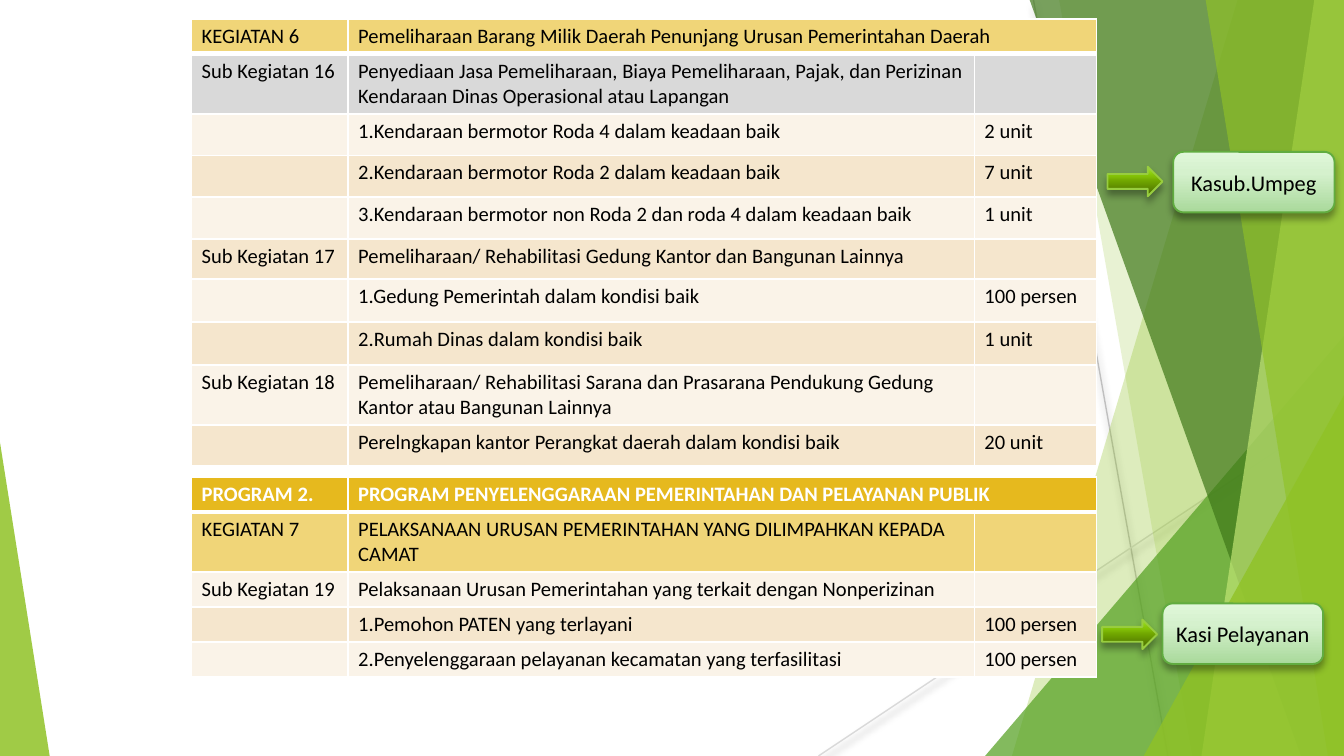
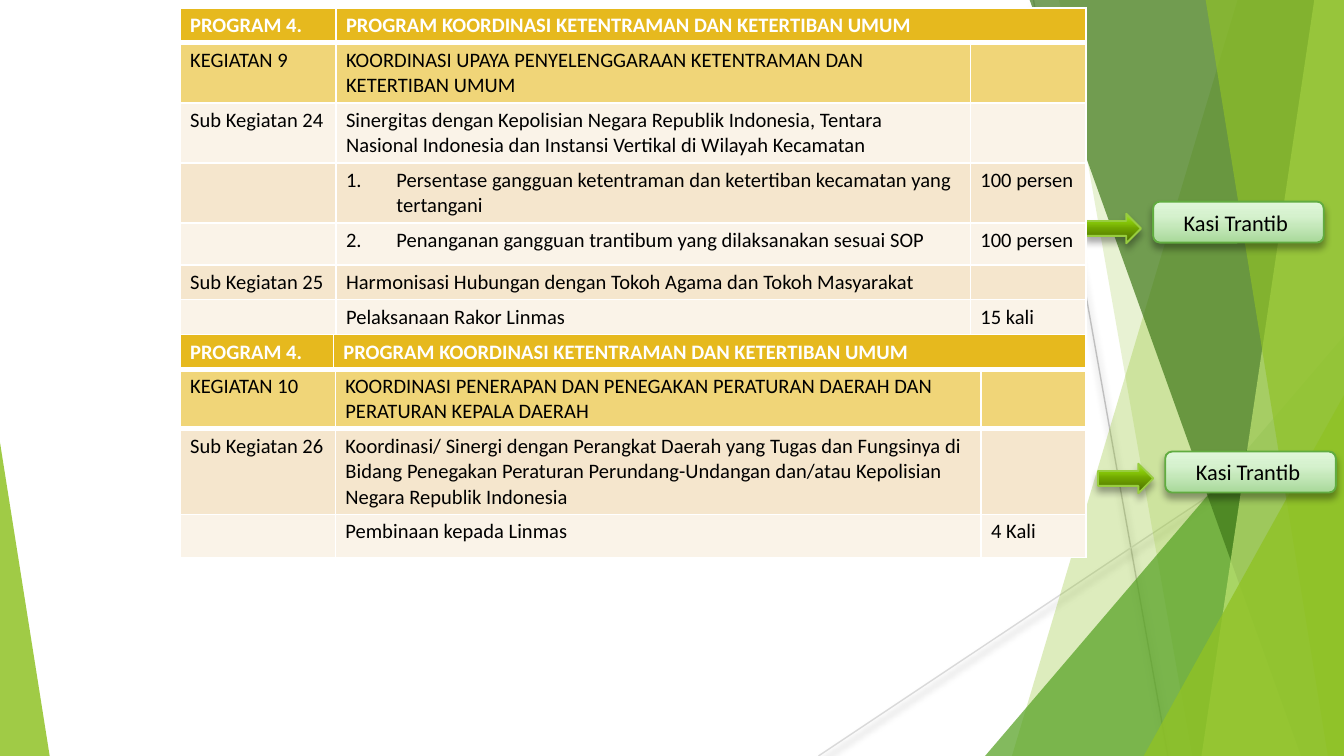
from lxml import etree
from pptx import Presentation
from pptx import util as u
from pptx.dml.color import RGBColor
from pptx.enum import shapes, text
from pptx.oxml.ns import qn

SCALE = 4572
WIDTH, HEIGHT = 2000, 1125
FONT = "Calibri"
COLORS = {
    "black": "000000", "white": "FFFFFF",
    "program": "E6B91E", "kegiatan": "F0D578", "grey": "D9D9D9",
    "light": "FAF3E8", "dark": "F5E6CD",
    "green": "90C226", "leaf": "54A021", "forest": "3F7819", "lime": "C0E474",
    "line": "BFBFBF", "pale_line": "D9D9D9",
    "callout_line": "61AC40", "arrow_line": "98CD3F",
}
CALLOUT_STOPS = [(0, "A9D99B"), (65, "D5F1CD"), (100, "E0F7DA")]
ARROW_STOPS = [(0, "456600"), (50, "6FA400"), (70, "84C307"), (100, "A0E727")]


def px(*lengths):
    return [u.Emu(length * SCALE) for length in lengths]


def rgb(name):
    return RGBColor.from_string(COLORS[name])


def child(parent, tag, **attributes):
    values = {key: str(value) for key, value in attributes.items()}
    return etree.SubElement(parent, qn(tag), values)


class Deck:
    def __init__(self):
        self.presentation = Presentation()
        self.presentation.slide_width, self.presentation.slide_height = px(WIDTH, HEIGHT)
        self.slide = None

    def add_slide(self):
        self.slide = self.presentation.slides.add_slide(self.presentation.slide_layouts[6])
        fill = self.slide.background.fill
        fill.solid()
        fill.fore_color.rgb = rgb("white")
        self.backdrop()

    def backdrop(self):
        self.line((1538, 0), (1738, HEIGHT), "line")
        self.line((WIDTH, 604), (1218, HEIGHT), "pale_line")
        self.ribbon(1842, 1506, "green", 30)
        self.ribbon(1576, 1774, "green", 20)
        self.triangle((1466, 500, 534, 625), 1, "leaf", 72)
        self.ribbon(1532, 1936, "forest", 70)
        self.ribbon(1956, 1788, "lime", 70)
        self.ribbon(1794, 1976, "green", 65)
        self.triangle((1702, 588, 298, 537), 1, "green", 80)
        self.triangle((0, 658, 74, 467), 0, "green", 85)

    def line(self, start, end, color):
        connector = self.slide.shapes.add_connector(
            shapes.MSO_CONNECTOR.STRAIGHT, *px(*start, *end))
        connector.line.color.rgb = rgb(color)
        connector.line.width = u.Pt(0.75)
        self.shadow(child(connector._element.spPr, "a:effectLst"))

    def shadow(self, effects):
        outer = child(effects, "a:outerShdw", blurRad=u.Pt(4), dist=u.Pt(3),
                      dir=5400000, rotWithShape=0)
        color = child(outer, "a:srgbClr", val=COLORS["black"])
        child(color, "a:alpha", val=35000)

    def tint(self, shape, color, opacity):
        shape.shadow.inherit = False
        shape.line.fill.background()
        shape.fill.solid()
        shape.fill.fore_color.rgb = rgb(color)
        solid = shape._element.spPr.find(qn("a:solidFill"))
        child(solid[0], "a:alpha", val=opacity * 1000)

    def ribbon(self, top, bottom, color, opacity):
        builder = self.slide.shapes.build_freeform(top, -1, scale=SCALE)
        builder.add_line_segments([(WIDTH, -1), (WIDTH, HEIGHT), (bottom, HEIGHT)], close=True)
        self.tint(builder.convert_to_shape(), color, opacity)

    def triangle(self, box, apex, color, opacity):
        shape = self.slide.shapes.add_shape(shapes.MSO_SHAPE.ISOSCELES_TRIANGLE, *px(*box))
        shape.adjustments[0] = apex
        self.tint(shape, color, opacity)

    def glossy(self, kind, box, stops, line):
        shape = self.slide.shapes.add_shape(kind, *px(*box))
        shape.fill.gradient()
        shape.fill.gradient_angle = 90
        stop_list = shape._element.spPr.find(qn("a:gradFill")).find(qn("a:gsLst"))
        for stop in list(stop_list):
            stop_list.remove(stop)
        for position, color in stops:
            child(child(stop_list, "a:gs", pos=position * 1000), "a:srgbClr", val=color)
        shape.line.color.rgb = rgb(line)
        shape.line.width = u.Pt(1)
        shape.shadow.inherit = False
        self.shadow(shape._element.spPr.find(qn("a:effectLst")))
        return shape

    def callout(self, label, box):
        shape = self.glossy(shapes.MSO_SHAPE.ROUNDED_RECTANGLE, box, CALLOUT_STOPS, "callout_line")
        frame = shape.text_frame
        frame.word_wrap = True
        frame.vertical_anchor = text.MSO_ANCHOR.MIDDLE
        self.margins(frame)
        frame.paragraphs[0].alignment = text.PP_ALIGN.CENTER
        self.run(frame.paragraphs[0], label, 12, "black")

    def arrow(self, left, top):
        self.glossy(shapes.MSO_SHAPE.RIGHT_ARROW, (left, top, 82, 44), ARROW_STOPS, "arrow_line")

    def margins(self, holder):
        holder.margin_left = holder.margin_right = px(15)[0]
        holder.margin_top = holder.margin_bottom = px(7)[0]

    def run(self, paragraph, words, size, color, bold=False):
        run = paragraph.add_run()
        run.text = words
        run.font.name = FONT
        run.font.size = u.Pt(size)
        run.font.bold = bold
        run.font.color.rgb = rgb(color)

    def table(self, left, top, widths, rows):
        height = sum(row[0] for row in rows)
        table = self.slide.shapes.add_table(
            len(rows), len(widths), *px(left, top, sum(widths), height)).table
        table.first_row = table.horz_banding = False
        for column, width in zip(table.columns, px(*widths)):
            column.width = width
        for index, (row_height, fill, *contents) in enumerate(rows):
            table.rows[index].height = px(row_height)[0]
            heading = len(contents) == 2
            if heading and len(widths) > 2:
                table.cell(index, 1).merge(table.cell(index, 2))
            for column in range(len(widths)):
                cell = table.cell(index, column)
                content = contents[column] if column < len(contents) else ""
                self.cell(cell, content, fill)
                if heading:
                    cell.vertical_anchor = text.MSO_ANCHOR.MIDDLE
                self.borders(cell, top=3 if index == 1 else 1, bottom=3 if index == 0 else 1)

    def cell(self, cell, content, fill):
        cell.fill.solid()
        cell.fill.fore_color.rgb = rgb(fill)
        self.margins(cell)
        number, words = content if isinstance(content, tuple) else (None, content)
        frame = cell.text_frame
        is_program = fill == "program"
        for index, line in enumerate(words.split("\n")):
            paragraph = frame.add_paragraph() if index else frame.paragraphs[0]
            if line:
                self.run(paragraph, line, 11, "white" if is_program else "black", is_program)
            else:
                child(paragraph._p, "a:endParaRPr", sz=1100)
            if number:
                properties = paragraph._p.get_or_add_pPr()
                indent = px(75)[0]
                properties.set("marL", str(indent))
                properties.set("indent", str(-indent))
                child(properties, "a:buFont", typeface=FONT)
                child(properties, "a:buAutoNum", type="arabicPeriod", startAt=number)

    def borders(self, cell, top, bottom):
        properties = cell._tc.get_or_add_tcPr()
        sides = [("a:lnL", 1), ("a:lnR", 1), ("a:lnT", top), ("a:lnB", bottom)]
        for position, (tag, width) in enumerate(sides):
            border = child(properties, tag, w=u.Pt(width))
            child(child(border, "a:solidFill"), "a:srgbClr", val=COLORS["white"])
            properties.insert(position, border)


def maintenance_slide(deck):
    widths = (233, 932, 182)
    deck.add_slide()
    deck.table(285, 28, widths, [
        (52, "kegiatan", "KEGIATAN 6",
         "Pemeliharaan Barang Milik Daerah Penunjang Urusan Pemerintahan Daerah"),
        (88, "grey", "Sub Kegiatan 16",
         "Penyediaan Jasa Pemeliharaan, Biaya Pemeliharaan, Pajak, dan Perizinan "
         "Kendaraan Dinas Operasional atau Lapangan", ""),
        (62, "light", "", "1.Kendaraan bermotor Roda 4 dalam keadaan baik", "2 unit"),
        (62, "dark", "", "2.Kendaraan bermotor Roda 2 dalam keadaan baik", "7 unit"),
        (62, "light", "", "3.Kendaraan bermotor non Roda 2 dan roda 4 dalam keadaan baik", "1 unit"),
        (60, "dark", "Sub Kegiatan 17",
         "Pemeliharaan/ Rehabilitasi Gedung Kantor dan Bangunan Lainnya", ""),
        (64, "light", "", "1.Gedung Pemerintah dalam kondisi baik", "100 persen"),
        (64, "dark", "", "2.Rumah Dinas dalam kondisi baik", "1 unit"),
        (88, "light", "Sub Kegiatan 18",
         "Pemeliharaan/ Rehabilitasi Sarana dan Prasarana Pendukung Gedung\n"
         "Kantor atau Bangunan Lainnya", ""),
        (60, "dark", "", "Perelngkapan kantor Perangkat daerah dalam kondisi baik", "20 unit"),
    ])
    deck.callout("Kasub.Umpeg", (1746, 226, 240, 90))
    deck.arrow(1640, 922)
    deck.table(285, 710, widths, [
        (52, "program", "PROGRAM 2.",
         "PROGRAM PENYELENGGARAAN PEMERINTAHAN DAN PELAYANAN PUBLIK"),
        (88, "kegiatan", "KEGIATAN 7",
         "PELAKSANAAN URUSAN PEMERINTAHAN YANG DILIMPAHKAN KEPADA CAMAT", ""),
        (52, "light", "Sub Kegiatan 19",
         "Pelaksanaan Urusan Pemerintahan yang terkait dengan Nonperizinan", ""),
        (52, "dark", "", "1.Pemohon PATEN yang terlayani", "100 persen"),
        (52, "light", "", "2.Penyelenggaraan pelayanan kecamatan yang terfasilitasi", "100 persen"),
    ])
    deck.callout("Kasi Pelayanan", (1730, 898, 239, 90))
    deck.arrow(1648, 248)


def public_order_slide(deck):
    program = (52, "program", "PROGRAM 4.", "PROGRAM KOORDINASI KETENTRAMAN DAN KETERTIBAN UMUM")
    deck.add_slide()
    deck.table(268, 549, (231, 961, 156), [
        (88, "kegiatan", "KEGIATAN 10",
         "KOORDINASI PENERAPAN DAN PENEGAKAN PERATURAN DAERAH DAN PERATURAN KEPALA DAERAH", ""),
        (124, "dark", "Sub Kegiatan 26",
         "Koordinasi/ Sinergi dengan Perangkat Daerah yang Tugas dan Fungsinya di "
         "Bidang Penegakan Peraturan Perundang-Undangan dan/atau Kepolisian\n"
         "Negara Republik Indonesia", ""),
        (64, "light", "", "Pembinaan kepada Linmas", "4 Kali"),
    ])
    deck.table(268, 498, (228, 1120), [program])
    deck.callout("Kasi Trantib ", (1716, 300, 254, 61))
    deck.arrow(1616, 318)
    deck.table(268, 12, (232, 944, 172), [
        program,
        (88, "kegiatan", "KEGIATAN 9",
         "KOORDINASI UPAYA PENYELENGGARAAN KETENTRAMAN DAN KETERTIBAN UMUM", ""),
        (88, "light", "Sub Kegiatan 24",
         "Sinergitas dengan Kepolisian Negara Republik Indonesia, Tentara\n"
         "Nasional Indonesia dan Instansi Vertikal di Wilayah Kecamatan", ""),
        (88, "dark", "",
         (1, "Persentase gangguan ketentraman dan ketertiban kecamatan yang tertangani"), "100 persen"),
        (62, "light", "",
         (2, "Penanganan gangguan trantibum yang dilaksanakan sesuai SOP"), "100 persen"),
        (52, "dark", "Sub Kegiatan 25",
         "Harmonisasi Hubungan dengan Tokoh Agama dan Tokoh Masyarakat", ""),
        (52, "light", "", "Pelaksanaan Rakor Linmas", "15 kali"),
    ])
    deck.callout("Kasi Trantib ", (1734, 672, 254, 61))
    deck.arrow(1634, 690)


def main():
    deck = Deck()
    maintenance_slide(deck)
    public_order_slide(deck)
    deck.presentation.save("out.pptx")


if __name__ == "__main__":
    main()
